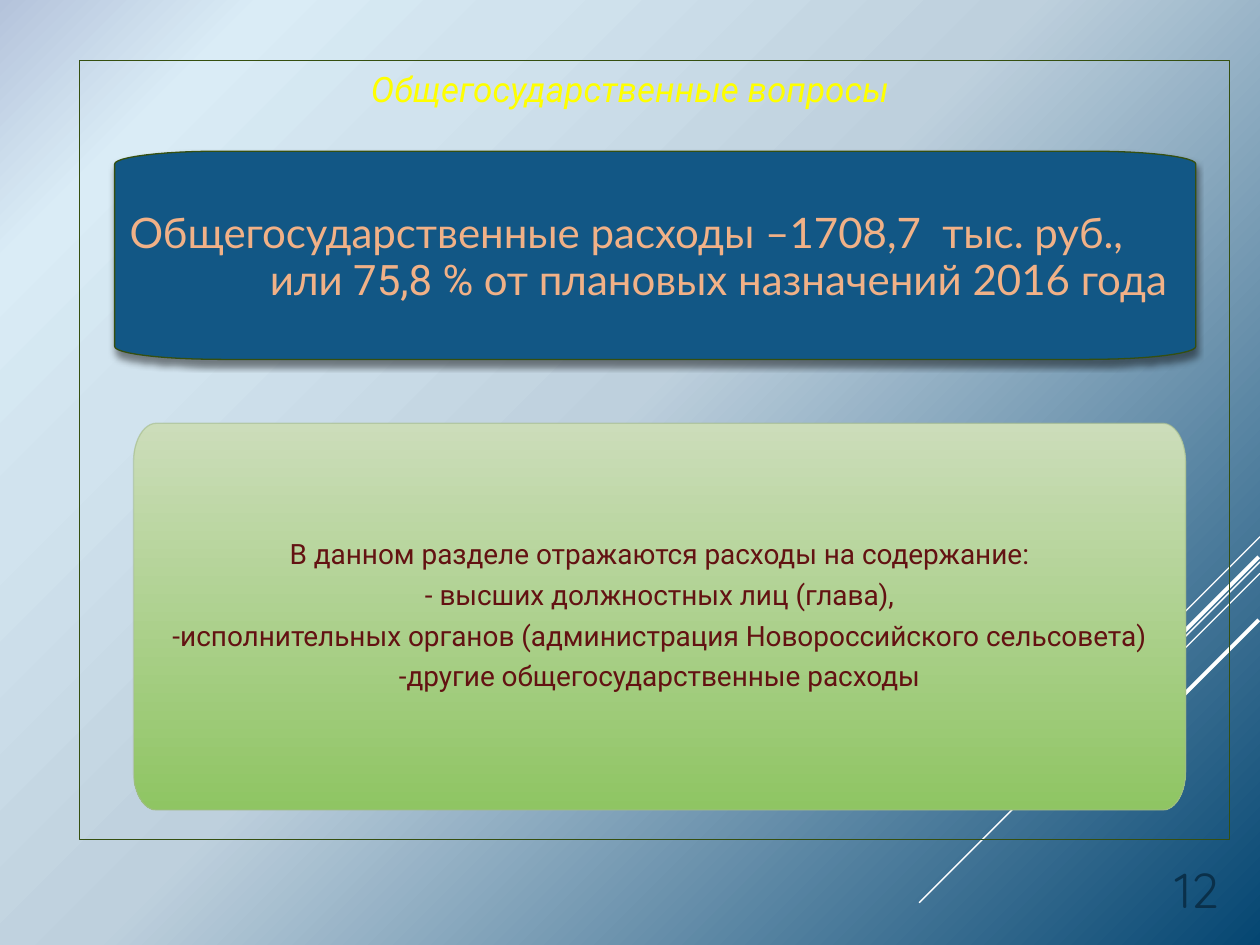
from math import cos, pi, sin

from lxml import etree
from pptx import Presentation
from pptx.dml.color import RGBColor
from pptx.enum.shapes import MSO_CONNECTOR, MSO_SHAPE
from pptx.enum.text import MSO_ANCHOR, PP_ALIGN
from pptx.oxml import parse_xml
from pptx.oxml.ns import nsdecls, qn
from pptx.util import Pt

STRAIGHT = MSO_CONNECTOR.STRAIGHT
RECTANGLE = MSO_SHAPE.RECTANGLE
MIDDLE, BOTTOM = MSO_ANCHOR.MIDDLE, MSO_ANCHOR.BOTTOM
LEFT, CENTER, RIGHT = PP_ALIGN.LEFT, PP_ALIGN.CENTER, PP_ALIGN.RIGHT

WHITE = RGBColor(0xFF, 0xFF, 0xFF)
YELLOW = RGBColor(0xFF, 0xFF, 0x00)
NAVY = RGBColor(0x0A, 0x30, 0x4A)
BLUE = RGBColor(0x12, 0x57, 0x85)
PEACH = RGBColor(0xF1, 0xB1, 0x87)
MAROON = RGBColor(0x63, 0x12, 0x12)
DARK_GREEN = RGBColor(0x35, 0x4F, 0x10)
EDGE_GREEN = RGBColor(0xA4, 0xBB, 0x8B)
PALE_GREEN = RGBColor(0xCC, 0xDD, 0xBA)
GREEN = RGBColor(0x8F, 0xC5, 0x63)

# Content
TITLE = "Общегосударственные вопросы"
PAGE_NUMBER = "12"
# Each line: alignment and its (text, font, size) spans
TOTAL_LINES = [
    (LEFT, [("Общегосударственные расходы –1708,7", "Lato", 24),
            (" ", "Lato", 28),
            ("тыс. руб.,", "Lato", 24)]),
    (RIGHT, [("или", "Lato", 24),
             (" 75,8 % ", "Roboto", 24),
             ("от плановых назначений 2016 года", "Lato", 24)]),
]
DETAIL_LINES = [
    (CENTER, [(text, "Roboto", 16)]) for text in (
        "В данном разделе отражаются расходы на содержание:",
        "- высших должностных лиц (глава),",
        "-исполнительных органов (администрация Новороссийского сельсовета)",
        "-другие общегосударственные расходы",
    )
]
BACKGROUND_STOPS = [(0, "B4C3DB"), (12, "DAECF6"), (24, "D1E3EE"),
                    (47, "BED0DD"), (100, "054672")]
# Diagonal rays, all at 45 degrees: right end x, y, run, line width
RAYS = [(720, 306.7, 60, 0.75), (720, 321.1, 194.8, 0.75),
        (720, 327.6, 124, 0.75), (719.3, 318.2, 113, 2.25),
        (719.3, 354.2, 82, 2.25)]

# Places: left, top, width, height
TITLE_AREA = (45.4, 34.6, 629.3, 31.7)
NUMBER_AREA = (550, 508.3, 153.4, 20.2)
FRAME_AREA = (45.4, 34.6, 657.4, 445)
TOTAL_AREA = (65.5, 86.4, 617.8, 119)
DETAIL_AREA = (76.3, 241.9, 601.2, 221)


def points(values):
    return [Pt(value) for value in values]


def format_span(span, font, size, color):
    span.font.name, span.font.size = font, Pt(size)
    span.font.color.rgb = color


def add_panel(page, area, radius_x, radius_y, steps=12):
    """Rectangle with elliptical corners."""
    left, top, width, height = area
    right, bottom = left + width, top + height
    corners = [(right - radius_x, bottom - radius_y), (left + radius_x, bottom - radius_y),
               (left + radius_x, top + radius_y), (right - radius_x, top + radius_y)]
    outline = []
    for quarter, (x, y) in enumerate(corners):
        for step in range(steps + 1):
            angle = (quarter + step / steps) * pi / 2
            outline.append((Pt(x + radius_x * cos(angle)), Pt(y + radius_y * sin(angle))))
    builder = page.shapes.build_freeform(*outline[0])
    builder.add_line_segments(outline[1:], close=True)
    panel = builder.convert_to_shape()
    panel.shadow.inherit = False
    panel.line.width = Pt(0.75)
    return panel


def write_lines(panel, lines, color, insets, gap):
    frame = panel.text_frame
    frame.word_wrap, frame.vertical_anchor = True, MIDDLE
    (frame.margin_left, frame.margin_top,
     frame.margin_right, frame.margin_bottom) = points(insets)
    frame.text = "\n".join([""] * len(lines))
    for index, (alignment, spans) in enumerate(lines):
        paragraph = frame.paragraphs[index]
        paragraph.alignment, paragraph.line_spacing = alignment, 0.9
        paragraph.space_before = Pt(gap if index else 0)
        for text, font, size in spans:
            span = paragraph.add_run()
            span.text = text
            format_span(span, font, size, color)


deck = Presentation()
deck.slide_width, deck.slide_height = Pt(720), Pt(540)
page = deck.slides.add_slide(deck.slide_layouts[5])

# Background gradient spreading from the top left corner
page.background.fill.gradient()
gradient = page.element.find(".//" + qn("a:gradFill"))
stops = "".join(f'<a:gs pos="{place * 1000}"><a:srgbClr val="{color}"/></a:gs>'
                for place, color in BACKGROUND_STOPS)
gradient.getparent().replace(gradient, parse_xml(
    f'<a:gradFill {nsdecls("a")} rotWithShape="1"><a:gsLst>{stops}</a:gsLst>'
    '<a:path path="circle"><a:fillToRect l="0" t="0" r="100000" b="100000"/></a:path>'
    '</a:gradFill>'))

# Rays
for x, y, run, weight in RAYS:
    ray = page.shapes.add_connector(STRAIGHT, *points((x, y, x - run, y + run)))
    ray.line.color.rgb, ray.line.width = WHITE, Pt(weight)
    etree.SubElement(ray.element.spPr, qn("a:effectLst"))

# Title and page number
title = page.shapes.title
title.left, title.top, title.width, title.height = points(TITLE_AREA)
number = page.shapes.add_textbox(*points(NUMBER_AREA))
for box, text, alignment, anchor, font, size, color in (
        (title, TITLE, CENTER, MIDDLE, "Roboto", 20, YELLOW),
        (number, PAGE_NUMBER, RIGHT, BOTTOM, "Quicksand", 28, NAVY)):
    frame = box.text_frame
    frame.text = text
    frame.word_wrap, frame.vertical_anchor = True, anchor
    frame.paragraphs[0].alignment = alignment
    format_span(frame.paragraphs[0].runs[0], font, size, color)
title.text_frame.paragraphs[0].runs[0].font.italic = True

# Thin frame
border = page.shapes.add_shape(RECTANGLE, *points(FRAME_AREA))
border.shadow.inherit = False
border.fill.background()
border.line.color.rgb, border.line.width = DARK_GREEN, Pt(0.75)

# Total panel with a soft shadow
total = add_panel(page, TOTAL_AREA, 61, 7.4)
total.fill.solid()
total.fill.fore_color.rgb = BLUE
total.line.color.rgb = DARK_GREEN
total.element.spPr.find(qn("a:effectLst")).append(parse_xml(
    f'<a:outerShdw {nsdecls("a")} blurRad="{Pt(4)}" dist="{Pt(3)}" dir="5400000" rotWithShape="0">'
    '<a:srgbClr val="000000"><a:alpha val="46000"/></a:srgbClr></a:outerShdw>'))
write_lines(total, TOTAL_LINES, PEACH, (8.5, 7.2, 16.5, 7.2), 0)
wide_space = total.text_frame.paragraphs[0].runs[1]
wide_space.font.bold = True
wide_space.font._element.set("spc", "540")

# Detail panel
detail = add_panel(page, DETAIL_AREA, 13, 22)
detail.fill.gradient()
detail.fill.gradient_angle = 270
for stop, color in zip(detail.fill.gradient_stops, (PALE_GREEN, GREEN)):
    stop.color.rgb = color
detail.line.color.rgb = EDGE_GREEN
edge = detail.element.spPr.find(qn("a:ln")).find(".//" + qn("a:srgbClr"))
etree.SubElement(edge, qn("a:alpha")).set("val", "60000")
write_lines(detail, DETAIL_LINES, MAROON, (2.9, 2.9, 2.9, 2.9), 6)

deck.save("out.pptx")
